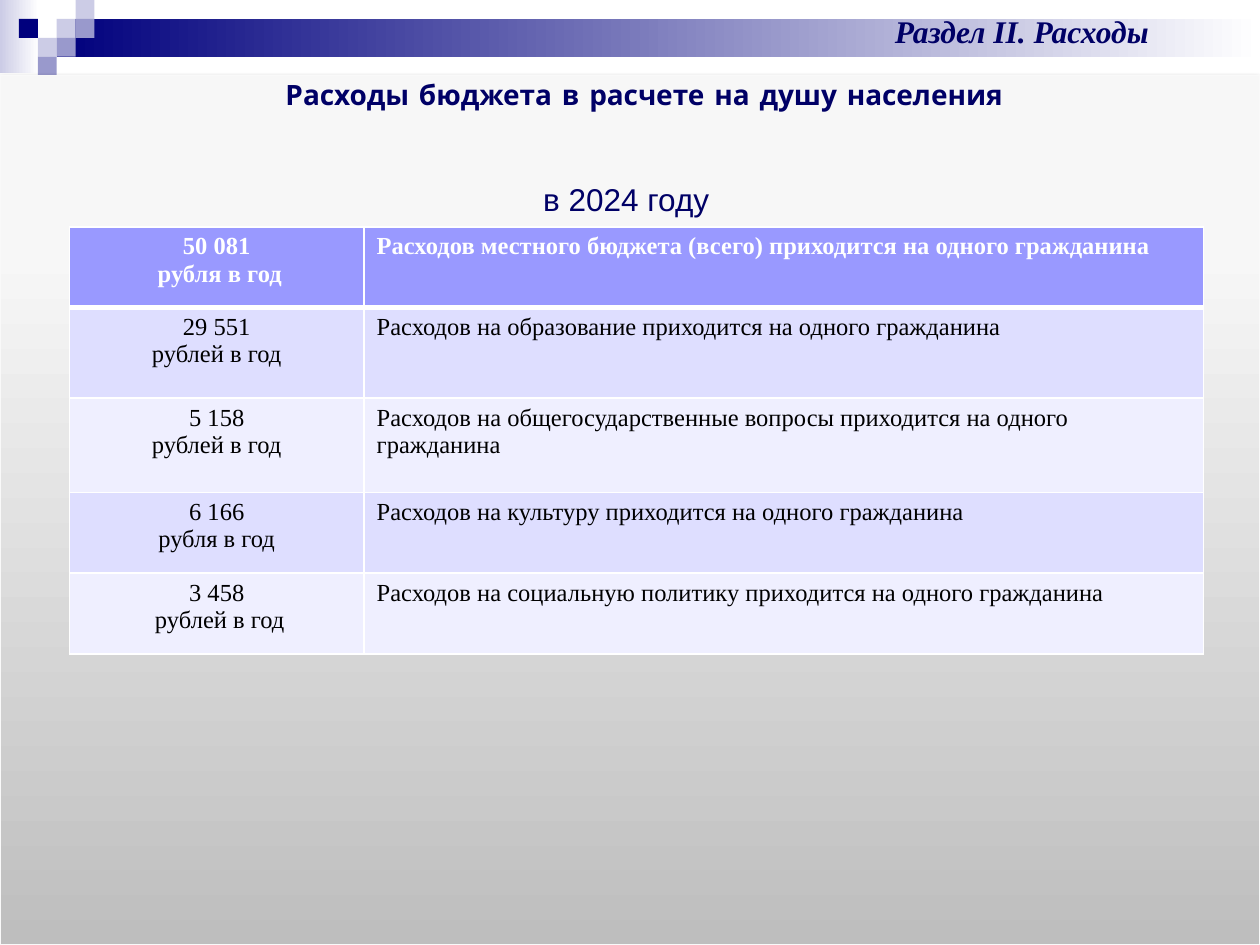
"""Build the slide on budget spending per resident in 2024."""
from lxml import etree
from pptx import Presentation
from pptx import util as u
from pptx.dml.color import RGBColor
from pptx.enum import shapes, text
from pptx.oxml import ns, parse_xml

COLORS = {
    "navy": "00007D", "lilac": "CCCCE6", "violet": "9999CC", "white": "FFFFFF",
    "title": "000066", "black": "000000", "header": "9999FF",
    "band_dark": "DEDEFF", "band_light": "EFEFFF", "panel_line": "F9F9F9",
    "panel_low": "BEBEBE", "panel_mid": "F7F7F7", "panel_top": "F8F8F8",
}
SERIF = "Times New Roman"


def add_block(box, fill, angle=0, kind=shapes.MSO_SHAPE.RECTANGLE):
    """Add a shape filled with one colour name or a list of (percent, name) stops."""
    sp = s.shapes.add_shape(kind, *map(u.Inches, box))
    sp.shadow.inherit = False
    sp.line.fill.background()
    if isinstance(fill, str):
        sp.fill.solid()
        sp.fill.fore_color.rgb = RGBColor.from_string(COLORS[fill])
        return sp
    sp.fill.gradient()
    sp.fill.gradient_angle = angle
    stops = sp._element.spPr.find(ns.qn("a:gradFill")).find(ns.qn("a:gsLst"))
    for stop in list(stops):
        stops.remove(stop)
    for percent, name in fill:
        stop = etree.SubElement(stops, ns.qn("a:gs"), pos=str(percent * 1000))
        etree.SubElement(stop, ns.qn("a:srgbClr"), val=COLORS[name])
    return sp


def write(tf, lines, size, font, color, bold=False, italic=False,
          align=text.PP_ALIGN.CENTER):
    """Write each line as a paragraph with one formatted run."""
    tf.word_wrap = True
    for i, line in enumerate(lines):
        p = tf.add_paragraph() if i else tf.paragraphs[0]
        p.alignment = align
        r = p.add_run()
        r.text = line
        r.font.size, r.font.name = u.Pt(size), font
        r.font.bold, r.font.italic = bold, italic
        r.font.color.rgb = RGBColor.from_string(COLORS[color])


prs = Presentation()
prs.slide_width, prs.slide_height = u.Inches(10), u.Inches(7.5)
s = prs.slides.add_slide(prs.slide_layouts[5])

add_block((0, 0, 0.31, 0.58), [(0, "lilac"), (100, "white")])
add_block((0.45, 0.15, 9.55, 0.3), [(0, "navy"), (100, "white")])
SQUARE = 0.15
for col, row, color in [
    (3, 1, "lilac"), (4, 0, "lilac"), (4, 1, "violet"), (2, 2, "lilac"),
    (1, 1, "navy"), (3, 2, "violet"), (2, 3, "violet"),
]:
    add_block((col * SQUARE, row * SQUARE, SQUARE, SQUARE), color)

panel = add_block((0, 0.6, 10, 6.9),
                  [(0, "panel_low"), (80, "panel_mid"), (100, "panel_top")],
                  90, shapes.MSO_SHAPE.FLOWCHART_PROCESS)
panel.line.color.rgb = RGBColor.from_string(COLORS["panel_line"])
panel.line.width = u.Pt(0.75)
effects = panel._element.spPr.find(ns.qn("a:effectLst"))
effects.append(parse_xml(
    f'<a:outerShdw {ns.nsdecls("a")} blurRad="{u.Pt(3.1)}" dist="{u.Pt(1.8)}" '
    'dir="5400000" rotWithShape="0"><a:srgbClr val="000000">'
    '<a:alpha val="35000"/></a:srgbClr></a:outerShdw>'))

title = s.shapes.title
title._element.getparent().append(title._element)
title.left, title.top, title.width, title.height = map(u.Inches, (-0.03, 1.31, 10, 0.54))
title.text_frame.vertical_anchor = text.MSO_ANCHOR.MIDDLE
write(title.text_frame, ["в 2024 году"], 18, "Arial", "title")

rows = [
    (0.64, "50 081", " рубля в год", "Расходов местного бюджета (всего) приходится на одного гражданина"),
    (0.72, "29 551", "рублей в год", "Расходов на образование приходится на одного гражданина"),
    (0.75, "5 158", "рублей в год", "Расходов на общегосударственные вопросы приходится на одного гражданина"),
    (0.64, "6 166", "рубля в год", "Расходов на культуру приходится на одного гражданина"),
    (0.64, "3 458", " рублей в год", "Расходов на социальную политику приходится на одного гражданина"),
]
total_height = sum(row[0] for row in rows)
table = s.shapes.add_table(len(rows), 2, *map(u.Inches, (0.55, 1.8, 9, total_height))).table
for column, width in zip(table.columns, (2.34, 6.66)):
    column.width = u.Inches(width)
for i, (height, amount, unit, purpose) in enumerate(rows):
    table.rows[i].height = u.Inches(height)
    fill = "header" if i == 0 else ("band_light", "band_dark")[i % 2]
    for j, lines in enumerate(([amount, unit], [purpose])):
        cell = table.cell(i, j)
        write(cell.text_frame, lines, 14, SERIF, "black" if i else "white", bold=i == 0,
              align=text.PP_ALIGN.LEFT if j else text.PP_ALIGN.CENTER)
        tc_pr = cell._tc.get_or_add_tcPr()
        for side in "LRTB":
            thick = (side == "B" and i == 0) or (side == "T" and i == 1)
            border = etree.SubElement(tc_pr, ns.qn(f"a:ln{side}"), w=str(u.Pt(3 if thick else 1)))
            solid = etree.SubElement(border, ns.qn("a:solidFill"))
            etree.SubElement(solid, ns.qn("a:srgbClr"), val=COLORS["white"])
        cell.fill.solid()
        cell.fill.fore_color.rgb = RGBColor.from_string(COLORS[fill])

for box, line, size, font, italic in [
    ((6.26, 0.05, 3.7, 0.4), "Раздел II. Расходы", 18, SERIF, True),
    ((0.87, 0.57, 8.49, 0.37), "Расходы бюджета в расчете на душу населения", 16, "Comic Neue", False),
]:
    heading = s.shapes.add_textbox(*map(u.Inches, box))
    write(heading.text_frame, [line], size, font, "title", bold=True, italic=italic)
    heading.text_frame.auto_size = text.MSO_AUTO_SIZE.SHAPE_TO_FIT_TEXT

prs.save("out.pptx")
